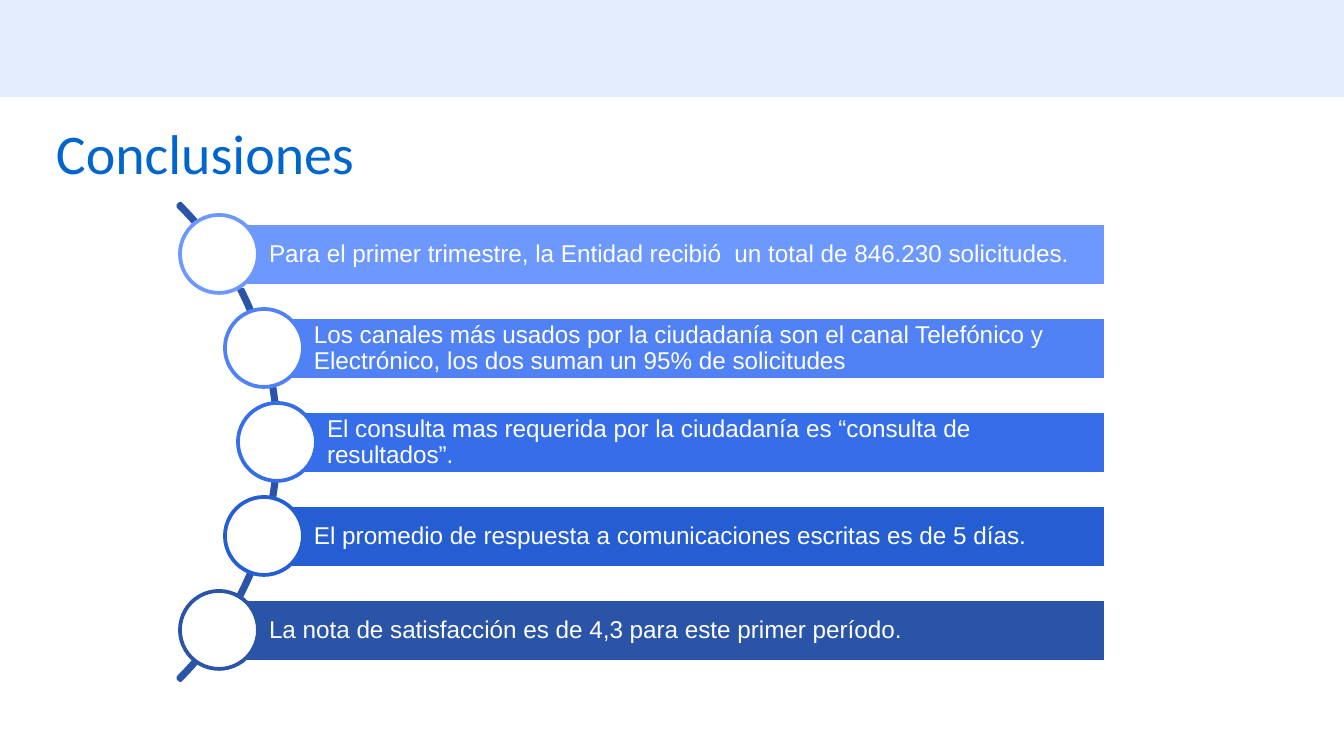
"""Build the conclusions slide: five bars hung along an arc."""
from dataclasses import dataclass
from math import sqrt

from pptx import Presentation
from pptx.dml.color import RGBColor
from pptx.enum.shapes import MSO_SHAPE
from pptx.enum.text import MSO_ANCHOR, MSO_AUTO_SIZE, PP_ALIGN
from pptx.util import Pt

RECT, OVAL, ARC = MSO_SHAPE.RECTANGLE, MSO_SHAPE.OVAL, MSO_SHAPE.BLOCK_ARC
MIDDLE, LEFT, NO_FIT = MSO_ANCHOR.MIDDLE, PP_ALIGN.LEFT, MSO_AUTO_SIZE.NONE
WHITE = RGBColor(0xFF, 0xFF, 0xFF)
BANNER = RGBColor(0xE4, 0xED, 0xFE)
TITLE = RGBColor(0x00, 0x66, 0xCD)
NAVY = RGBColor(0x2A, 0x54, 0xA7)

WIDTH, HEIGHT = 1344, 756
EMU_PER_PX = 9144000 / WIDTH
ARC_X, ARC_Y, ARC_R = -58, 442, 337
CENTRE_R = 335
PITCH, BAR_H, CIRCLE = 94, 63, 78
BAR_RIGHT = 1106


@dataclass
class Conclusion:
    text: str
    color: RGBColor


CONCLUSIONS = [
    Conclusion("Para el primer trimestre, la Entidad recibió  un total de 846.230 solicitudes.",
               RGBColor(0x6D, 0x98, 0xFF)),
    Conclusion("Los canales más usados por la ciudadanía son el canal Telefónico y "
               "Electrónico, los dos suman un 95% de solicitudes",
               RGBColor(0x50, 0x82, 0xF6)),
    Conclusion("El consulta mas requerida por la ciudadanía es “consulta de resultados”.",
               RGBColor(0x36, 0x6E, 0xE9)),
    Conclusion("El promedio de respuesta a comunicaciones escritas es de 5 días.",
               RGBColor(0x25, 0x5E, 0xD2)),
    Conclusion("La nota de satisfacción es de 4,3 para este primer período.", NAVY),
]


def px(n: int) -> int:
    return round(n * EMU_PER_PX)


def add_shape(s, kind, x: int, y: int, w: int, h: int,
              fill: RGBColor | None, line: RGBColor | None):
    sp = s.shapes.add_shape(kind, px(x), px(y), px(w), px(h))
    sp.shadow.inherit = False
    if fill is None:
        sp.fill.background()
    else:
        sp.fill.solid()
        sp.fill.fore_color.rgb = fill
    if line is None:
        sp.line.fill.background()
    else:
        sp.line.color.rgb = line
        sp.line.width = Pt(2)
    return sp


def write(sp, text: str, font: str, size: int, color: RGBColor,
          left: int, right: int) -> None:
    tf = sp.text_frame
    tf.word_wrap = True
    tf.auto_size = NO_FIT
    tf.vertical_anchor = MIDDLE
    tf.margin_left, tf.margin_right = px(left), px(right)
    tf.margin_top = tf.margin_bottom = px(5)
    p = tf.paragraphs[0]
    p.alignment = LEFT
    p.line_spacing = 0.9
    r = p.add_run()
    r.text = text
    r.font.name, r.font.size = font, Pt(size)
    r.font.color.rgb = color


def add_conclusion(s, item: Conclusion, step: int) -> None:
    dy = step * PITCH
    x = ARC_X + round(sqrt(CENTRE_R ** 2 - dy ** 2))
    y = ARC_Y + dy
    bar = add_shape(s, RECT, x, y - BAR_H // 2, BAR_RIGHT - x, BAR_H, item.color, WHITE)
    write(bar, item.text, "Arial", 13, WHITE, 50, 5)
    add_shape(s, OVAL, x - CIRCLE // 2, y - CIRCLE // 2, CIRCLE, CIRCLE, WHITE, item.color)


def main() -> None:
    prs = Presentation()
    prs.slide_width, prs.slide_height = px(WIDTH), px(HEIGHT)
    s = prs.slides.add_slide(prs.slide_layouts[5])
    add_shape(s, RECT, 0, 0, WIDTH, 97, BANNER, None)

    title = s.shapes.title
    title.left, title.top, title.width, title.height = px(46), px(124), px(1253), px(65)
    write(title, "Conclusiones", "Calibri", 30, TITLE, 10, 10)

    arc = add_shape(s, ARC, ARC_X - ARC_R, ARC_Y - ARC_R, 2 * ARC_R, 2 * ARC_R, None, NAVY)
    for i, value in enumerate((189, 27, 0.005)):
        arc.adjustments[i] = value
    for i, item in enumerate(CONCLUSIONS):
        add_conclusion(s, item, i - len(CONCLUSIONS) // 2)
    prs.save("out.pptx")


if __name__ == "__main__":
    main()
